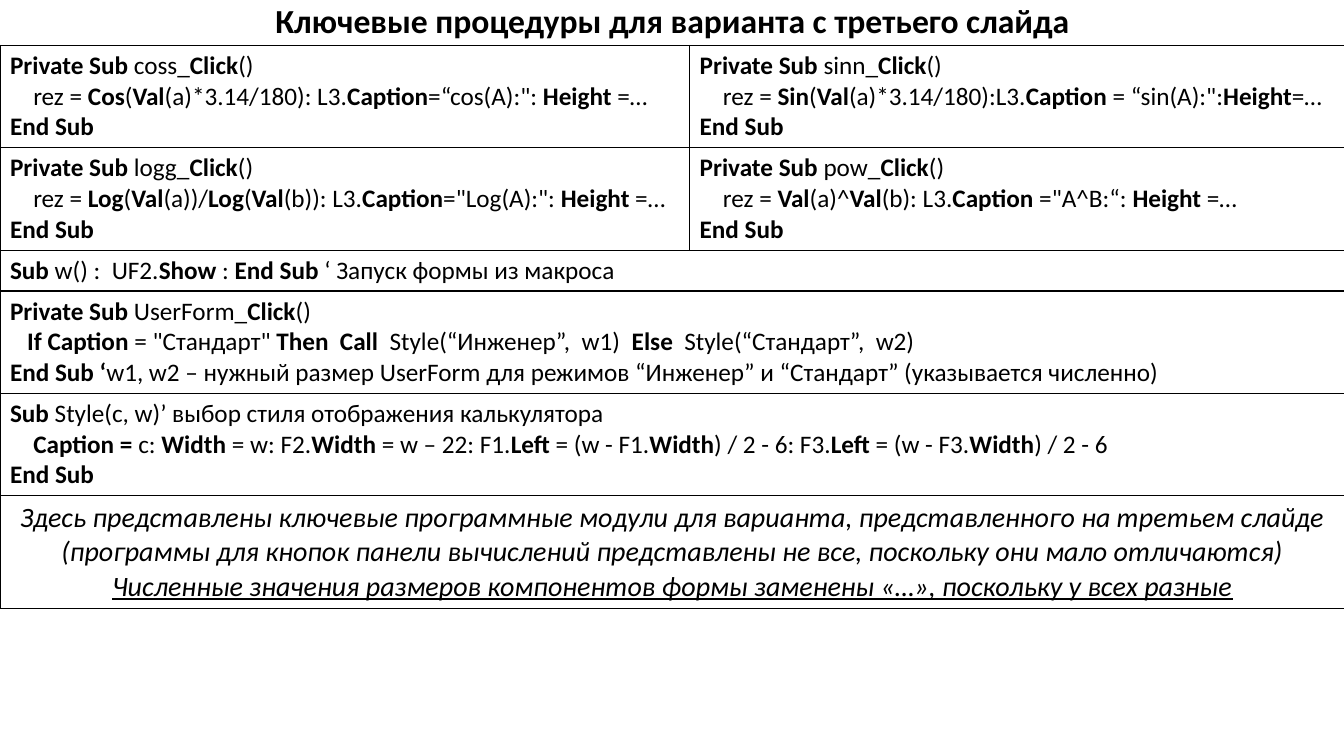
"""Build a slide listing the key procedures of a calculator form."""
from lxml.etree import SubElement
from pptx import Presentation
from pptx.dml.color import RGBColor
from pptx.enum.text import MSO_ANCHOR, PP_ALIGN
from pptx.oxml.ns import qn
from pptx.util import Inches, Pt

COLORS = {"ink": "000000", "paper": "FFFFFF"}
FONT = "Calibri"
BOLD_MARK = "|"
TITLE = "Ключевые процедуры для варианта с третьего слайда"
PROCEDURES = [
    [
        ["|Private Sub |coss_|Click|()",
         "rez = |Cos|(|Val|(a)*3.14/180): L3.|Caption|=“cos(A):\": |Height| =…",
         "|End Sub"],
        ["|Private Sub |sinn_|Click|()",
         "rez = |Sin|(|Val|(a)*3.14/180):L3.|Caption| = “sin(A):\":|Height|=…",
         "|End Sub"],
    ],
    [
        ["|Private Sub |logg_|Click|()",
         "rez = |Log|(|Val|(a))/|Log|(|Val|(b)): L3.|Caption|=\"Log(A):\": |Height| =…",
         "|End Sub"],
        ["|Private Sub |pow_|Click|()",
         "rez = |Val|(a)^|Val|(b): L3.|Caption| =\"A^B:“: |Height| =…",
         "|End Sub"],
    ],
    [["|Sub |w() :  UF2.|Show| : |End Sub| ‘ Запуск формы из макроса"]],
    [["|Private Sub |UserForm_|Click|()",
      "|If Caption| = \"Стандарт\" |Then  Call | Style(“Инженер”,  w1)  |Else|  Style(“Стандарт”,  w2)",
      "|End Sub ‘|w1, w2 – нужный размер UserForm для режимов “Инженер” и “Стандарт” (указывается численно)"]],
    [["|Sub |Style(c, w)’ выбор стиля отображения калькулятора",
      "|Caption = |c: |Width| = w: F2.|Width| = w – 22: F1.|Left| = (w - F1.|Width|) / 2 - 6: "
      "F3.|Left| = (w - F3.|Width|) / 2 - 6",
      "|End Sub"]],
]
REMARKS = [
    "Здесь представлены ключевые программные модули для варианта, представленного на третьем слайде",
    "(программы для кнопок панели вычислений представлены не все, поскольку они мало отличаются)",
    "Численные значения размеров компонентов формы заменены «…», поскольку у всех разные",
]
COLUMN_WIDTHS = (6.84, 6.5)
CELL_PADDING, CODE_LINE, REMARK_LINE = 0.1, 0.3, 0.33
BODY_INDENT, CONDITION_INDENT = 0.23, 0.17


def style_run(run, size, bold=False, italic=False, underline=False):
    font = run.font
    font.name, font.size, font.bold = FONT, Pt(size), bold
    font.italic, font.underline = italic, underline
    font.color.rgb = RGBColor.from_string(COLORS["ink"])


def frame_cell(cell):
    properties = cell._tc.get_or_add_tcPr()
    for side in ("a:lnL", "a:lnR", "a:lnT", "a:lnB"):
        border = SubElement(properties, qn(side), w=str(Pt(1)))
        ink = SubElement(border, qn("a:solidFill"))
        SubElement(ink, qn("a:srgbClr"), val=COLORS["ink"])
    cell.fill.solid()
    cell.fill.fore_color.rgb = RGBColor.from_string(COLORS["paper"])


def add_lines(text_frame, lines):
    text_frame.text = "\n".join([""] * len(lines))
    return zip(text_frame.paragraphs, lines)


def write_code(cell, lines):
    for number, (paragraph, line) in enumerate(add_lines(cell.text_frame, lines)):
        for part, words in enumerate(line.split(BOLD_MARK)):
            if words:
                run = paragraph.add_run()
                run.text = words
                style_run(run, 18, bold=part % 2 == 1)
        if number == 1:
            indent = CONDITION_INDENT if line.startswith("|If") else BODY_INDENT
            paragraph._p.get_or_add_pPr().set("marL", str(Inches(indent)))


def write_remarks(cell):
    for paragraph, line in add_lines(cell.text_frame, REMARKS):
        paragraph.text = line
        paragraph.alignment = PP_ALIGN.CENTER
        style_run(paragraph.runs[0], 20, italic=True, underline=line == REMARKS[-1])


def add_title(slide):
    title = slide.shapes.title
    title.left, title.top = Inches(0.23), Inches(-0.05)
    title.width, title.height = Inches(12.88), Inches(0.5)
    title.text_frame.text = TITLE
    title.text_frame.vertical_anchor = MSO_ANCHOR.MIDDLE
    heading = title.text_frame.paragraphs[0]
    heading.alignment = PP_ALIGN.CENTER
    style_run(heading.runs[0], 24, bold=True)


def add_procedures(slide):
    heights = [CELL_PADDING + CODE_LINE * len(row[0]) for row in PROCEDURES]
    heights.append(CELL_PADDING + REMARK_LINE * len(REMARKS))
    table = slide.shapes.add_table(
        len(heights), len(COLUMN_WIDTHS), 0, Inches(0.45),
        Inches(sum(COLUMN_WIDTHS)), Inches(sum(heights))).table
    table.first_row = table.horz_banding = False
    for column, width in zip(table.columns, COLUMN_WIDTHS):
        column.width = Inches(width)
    for row, height in zip(table.rows, heights):
        row.height = Inches(height)
    for cell in table.iter_cells():
        frame_cell(cell)
    for index, procedures in enumerate(PROCEDURES + [[REMARKS]]):
        if len(procedures) == 1:
            table.cell(index, 0).merge(table.cell(index, 1))
        if index == len(PROCEDURES):
            write_remarks(table.cell(index, 0))
            continue
        for column, lines in enumerate(procedures):
            write_code(table.cell(index, column), lines)


def main():
    deck = Presentation()
    deck.slide_width, deck.slide_height = Inches(13.33), Inches(7.5)
    slide = deck.slides.add_slide(deck.slide_layouts[5])
    add_title(slide)
    add_procedures(slide)
    deck.save("out.pptx")


if __name__ == "__main__":
    main()
